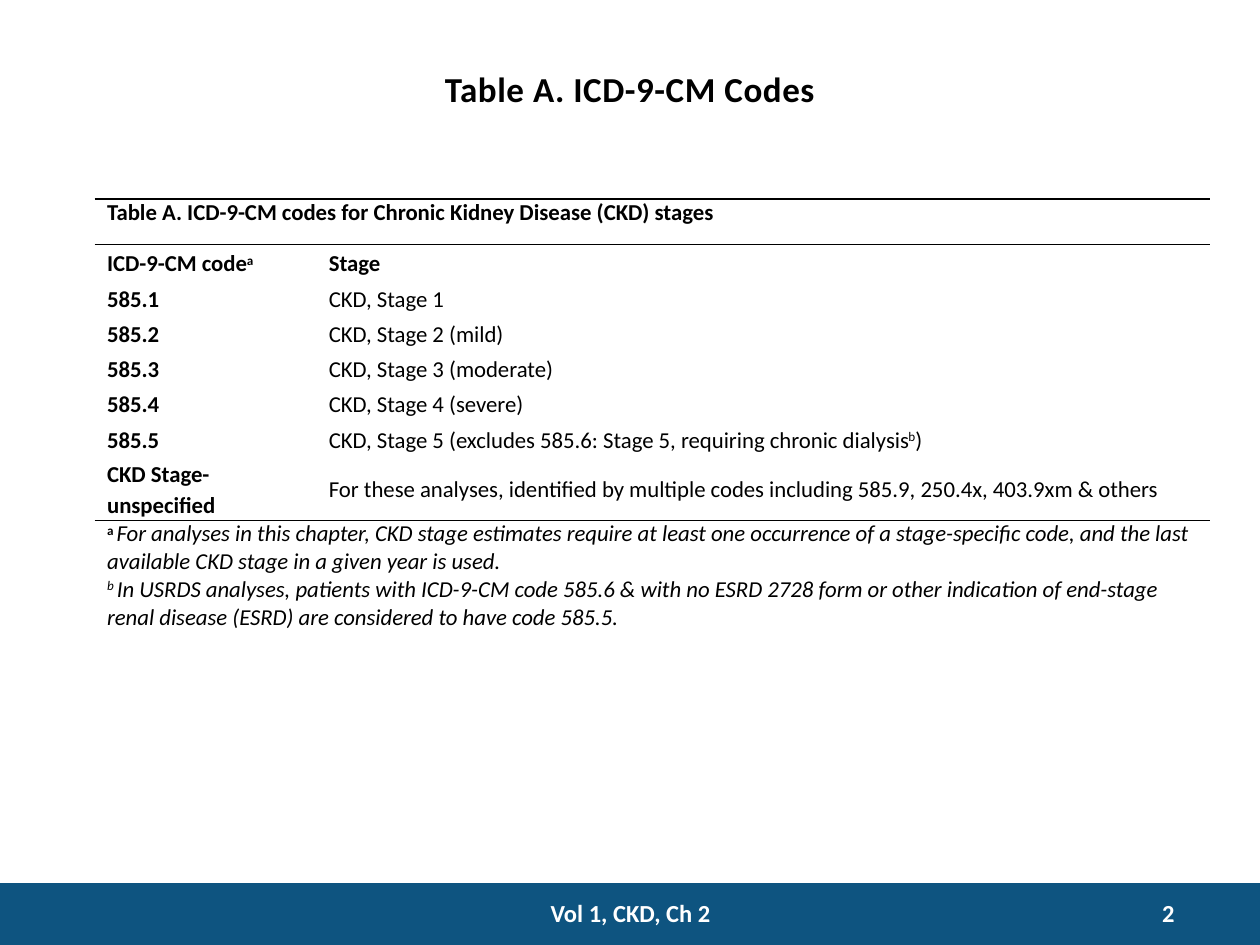
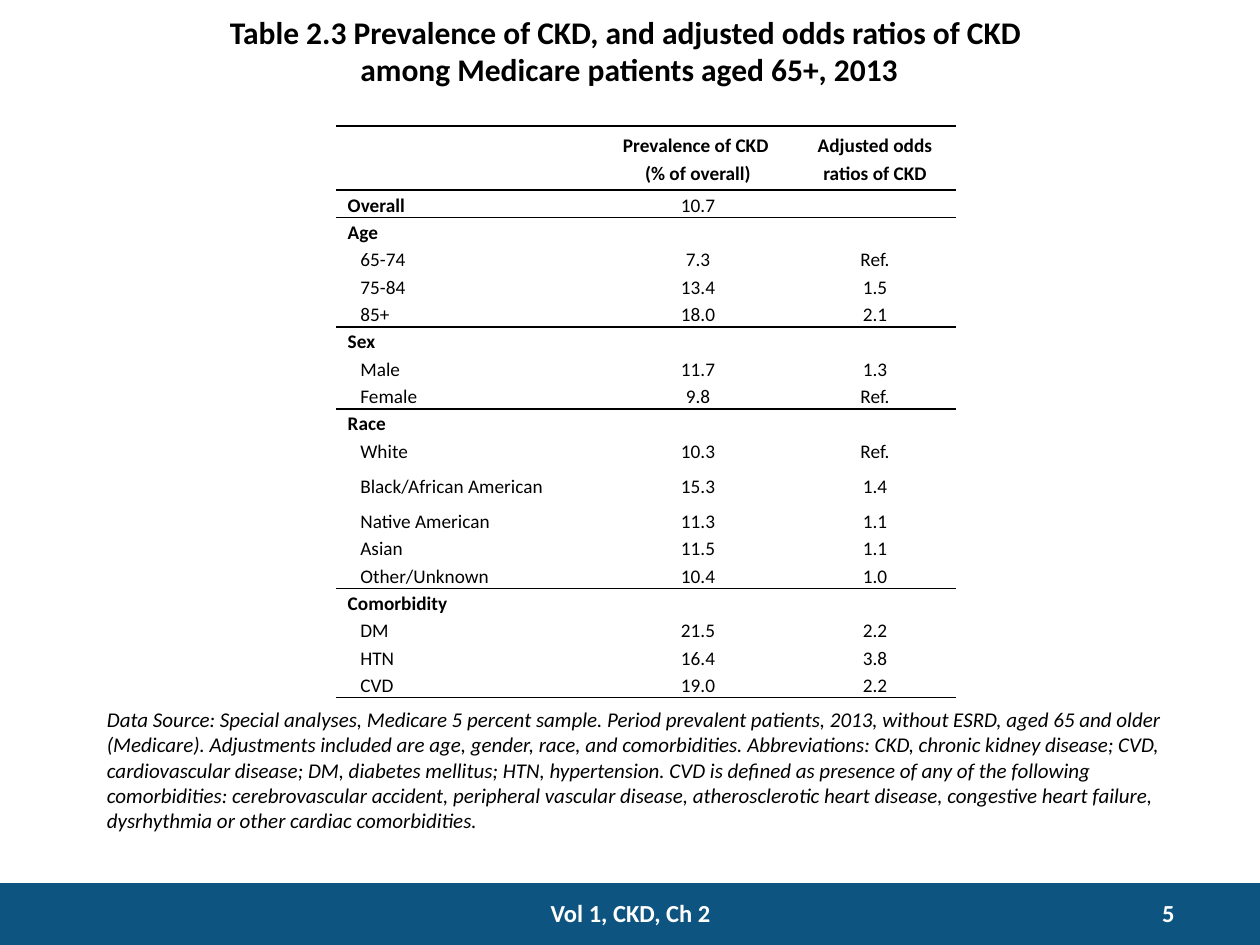
from copy import deepcopy

from lxml import etree
from pptx import Presentation
from pptx.dml.color import RGBColor
from pptx.enum import shapes, text
from pptx.oxml import ns
from pptx.util import Inches, Pt

BLACK = RGBColor(0, 0, 0)
WHITE = RGBColor(255, 255, 255)
NAVY = RGBColor(0x0E, 0x54, 0x80)
FONT = "Calibri"
LEFT, CENTER, RIGHT = text.PP_ALIGN.LEFT, text.PP_ALIGN.CENTER, text.PP_ALIGN.RIGHT
TOP, MIDDLE = text.MSO_ANCHOR.TOP, text.MSO_ANCHOR.MIDDLE

FOOTER = "Vol 1, CKD, Ch 2"
CODES_TITLE = "Table A. ICD-9-CM Codes"
CODES_CAPTION = "Table A. ICD-9-CM codes for Chronic Kidney Disease (CKD) stages"
CODES_HEADER = ([("ICD-9-CM code", {}), ("a", {"sup": True})], [("Stage", {"bold": True})])
CODES = [
    ("585.1", "CKD, Stage 1"),
    ("585.2", "CKD, Stage 2 (mild)"),
    ("585.3", "CKD, Stage 3 (moderate)"),
    ("585.4", "CKD, Stage 4 (severe)"),
    ("585.5", [("CKD, Stage 5 (excludes 585.6: Stage 5, requiring chronic dialysis", {}),
               ("b", {"sup": True}), (")", {})]),
    ("CKD Stage-unspecified",
     "For these analyses, identified by multiple codes including 585.9, 250.4x, 403.9xm & others"),
]
CODES_NOTES = [
    [("a ", {"sup": True, "bold": True, "italic": False}),
     ("For analyses in this chapter, CKD stage estimates require at least one occurrence of a "
      "stage-specific code, and the last available CKD stage in a given year is used.", {})],
    [("b ", {"sup": True}),
     ("In USRDS analyses, patients with ICD-9-CM code 585.6 & with no ESRD 2728 form or other "
      "indication of end-stage renal disease (ESRD) are considered to have code 585.5.", {})],
]

ODDS_TITLE = ("Table 2.3 Prevalence of CKD, and adjusted odds ratios of CKD \n"
              "among Medicare patients aged 65+, 2013")
ODDS_HEADER = ("", "Prevalence of CKD \n(% of overall)", "Adjusted odds ratios of CKD")
ODDS_GROUPS = [
    (("Overall", "10.7", ""), []),
    (("Age", "", ""), [("65-74", "7.3", "Ref."), ("75-84", "13.4", "1.5"), ("85+", "18.0", "2.1")]),
    (("Sex", "", ""), [("Male", "11.7", "1.3"), ("Female", "9.8", "Ref.")]),
    (("Race", "", ""), [("White", "10.3", "Ref."), ("Black/African American", "15.3", "1.4"),
                        ("Native American", "11.3", "1.1"), ("Asian", "11.5", "1.1"),
                        ("Other/Unknown", "10.4", "1.0")]),
    (("Comorbidity", "", ""), [("DM", "21.5", "2.2"), ("HTN", "16.4", "3.8"), ("CVD", "19.0", "2.2")]),
]
ODDS_SOURCE = (
    "Data Source: Special analyses, Medicare 5 percent sample. Period prevalent patients, 2013, "
    "without ESRD, aged 65 and older (Medicare). Adjustments included are age, gender, race, and "
    "comorbidities. Abbreviations: CKD, chronic kidney disease; CVD, cardiovascular disease; DM, "
    "diabetes mellitus; HTN, hypertension. CVD is defined as presence of any of the following "
    "comorbidities: cerebrovascular accident, peripheral vascular disease, atherosclerotic heart "
    "disease, congestive heart failure, dysrhythmia or other cardiac comorbidities.")


def write(p, content, align=LEFT, color=BLACK, spc=None, **formats):
    p.alignment = align
    if not content:
        p._p.get_or_add_endParaRPr().set("sz", str(int(formats["size"] * 100)))
    runs = [(content, {})] if isinstance(content, str) else content
    for words, extra in runs:
        values = {"name": FONT, "bold": False, "italic": False, **formats, **extra}
        sup = values.pop("sup", False)
        values["size"] = Pt(values["size"])
        for i, line in enumerate(words.split("\n") if words else []):
            if i:
                p.add_line_break()
                p._p[-1].append(deepcopy(r._r.rPr))
            r = p.add_run()
            r.text = line
            for key, value in values.items():
                setattr(r.font, key, value)
            r.font.color.rgb = color
            if sup:
                r._r.rPr.set("baseline", "30000")
            if spc:
                r._r.rPr.set("spc", str(spc))


def fill_box(sp, box, content, anchor=TOP, **formats):
    sp.left, sp.top, sp.width, sp.height = map(Inches, box)
    tf = sp.text_frame
    tf.word_wrap = True
    tf.auto_size = text.MSO_AUTO_SIZE.NONE
    tf.vertical_anchor = anchor
    write(tf.paragraphs[0], content, **formats)


def add_text(s, box, content, **formats):
    fill_box(s.shapes.add_textbox(0, 0, 0, 0), box, content, **formats)


def add_slide(prs, title, title_box, number, **formats):
    s = prs.slides.add_slide(prs.slide_layouts[5])
    band = s.shapes.add_shape(shapes.MSO_SHAPE.RECTANGLE, 0, Inches(7.01), Inches(10), Inches(0.5))
    band.shadow.inherit = False
    band.fill.solid()
    band.fill.fore_color.rgb = NAVY
    band.line.fill.background()
    white = {"color": WHITE, "size": 14, "bold": True}
    add_text(s, (3.92, 7.08, 2.17, 0.33), FOOTER, align=CENTER, **white)
    add_text(s, (8.42, 7.08, 1, 0.3), str(number), align=RIGHT, **white)
    fill_box(s.shapes.title, title_box, title, align=CENTER, bold=True, **formats)
    return s


def add_border(cell, side, shown):
    tcPr = cell._tc.get_or_add_tcPr()
    ln = etree.SubElement(tcPr, ns.qn("a:ln" + side), w=str(Pt(1)))
    fill = etree.SubElement(ln, ns.qn("a:solidFill" if shown else "a:noFill"))
    if shown:
        etree.SubElement(fill, ns.qn("a:srgbClr"), val=str(BLACK))


def add_table(s, left, top, widths, heights, rules, margin):
    frame = s.shapes.add_table(len(heights), len(widths), Inches(left), Inches(top),
                               Inches(sum(widths)), Inches(sum(heights)))
    table = frame.table
    table.first_row = table.horz_banding = False
    for column, width in zip(table.columns, widths):
        column.width = Inches(width)
    for i, (row, height) in enumerate(zip(table.rows, heights)):
        row.height = Inches(height)
        for cell in row.cells:
            cell.margin_left = cell.margin_right = Inches(margin)
            cell.margin_top = cell.margin_bottom = 0
            for side, shown in (("L", False), ("R", False), ("T", i in rules), ("B", i + 1 in rules)):
                add_border(cell, side, shown)
            cell.fill.background()
    return table


def write_cell(cell, content, spacing=1.15, anchor=MIDDLE, indent=0, **formats):
    cell.vertical_anchor = anchor
    p = cell.text_frame.paragraphs[0]
    if indent:
        p._p.get_or_add_pPr().set("marL", str(Inches(indent)))
    p.line_spacing = spacing
    write(p, content, **formats)


def build_codes(prs):
    s = add_slide(prs, CODES_TITLE, (0, 0.48, 10, 0.44), 2, size=20, spc=30, anchor=MIDDLE)
    body = [CODES_HEADER] + CODES
    heights = [0.36] + [0.28] * (len(body) - 1) + [0.51] + [0.44] * len(CODES_NOTES)
    end = 1 + len(body)
    table = add_table(s, 0.75, 1.58, (1.76, 7.09), heights, {0, 1, end}, 0.1)
    for i in (0, *range(end, len(heights))):
        table.cell(i, 0).merge(table.cell(i, 1))
    write_cell(table.cell(0, 0), CODES_CAPTION, 1.0, TOP, size=13, bold=True)
    for i, (code, stage) in enumerate(body, 1):
        write_cell(table.cell(i, 0), code, size=13, bold=True)
        write_cell(table.cell(i, 1), stage, size=13)
    for i, note in enumerate(CODES_NOTES, end):
        write_cell(table.cell(i, 0), note, 1.0, TOP, size=13, italic=True)


def build_odds(prs):
    s = add_slide(prs, ODDS_TITLE, (0.33, 0.05, 9.33, 0.78), 5, size=18)
    add_text(s, (0.75, 5.56, 8.58, 1.11), ODDS_SOURCE, size=12, italic=True)
    rows, rules = [(ODDS_HEADER, True)], {0, 1}
    for head, members in ODDS_GROUPS:
        rows += [(head, True)] + [(member, False) for member in members]
        rules.add(len(rows))
    tall = {"": 0.51, "Black/African American": 0.34}
    heights = [tall.get(cells[0], 0.18) for cells, _ in rows]
    table = add_table(s, 2.67, 1, (2.11, 1.52, 1.29), heights, rules, 0.09)
    for i, (cells, is_head) in enumerate(rows):
        for j, content in enumerate(cells):
            write_cell(table.cell(i, j), content, size=11, align=CENTER if j else LEFT,
                       bold=is_head and (i == 0 or j == 0), indent=0 if is_head or j else 0.1)


def main():
    prs = Presentation()
    prs.slide_width, prs.slide_height = Inches(10), Inches(7.5)
    build_codes(prs)
    build_odds(prs)
    prs.save("out.pptx")


if __name__ == "__main__":
    main()
